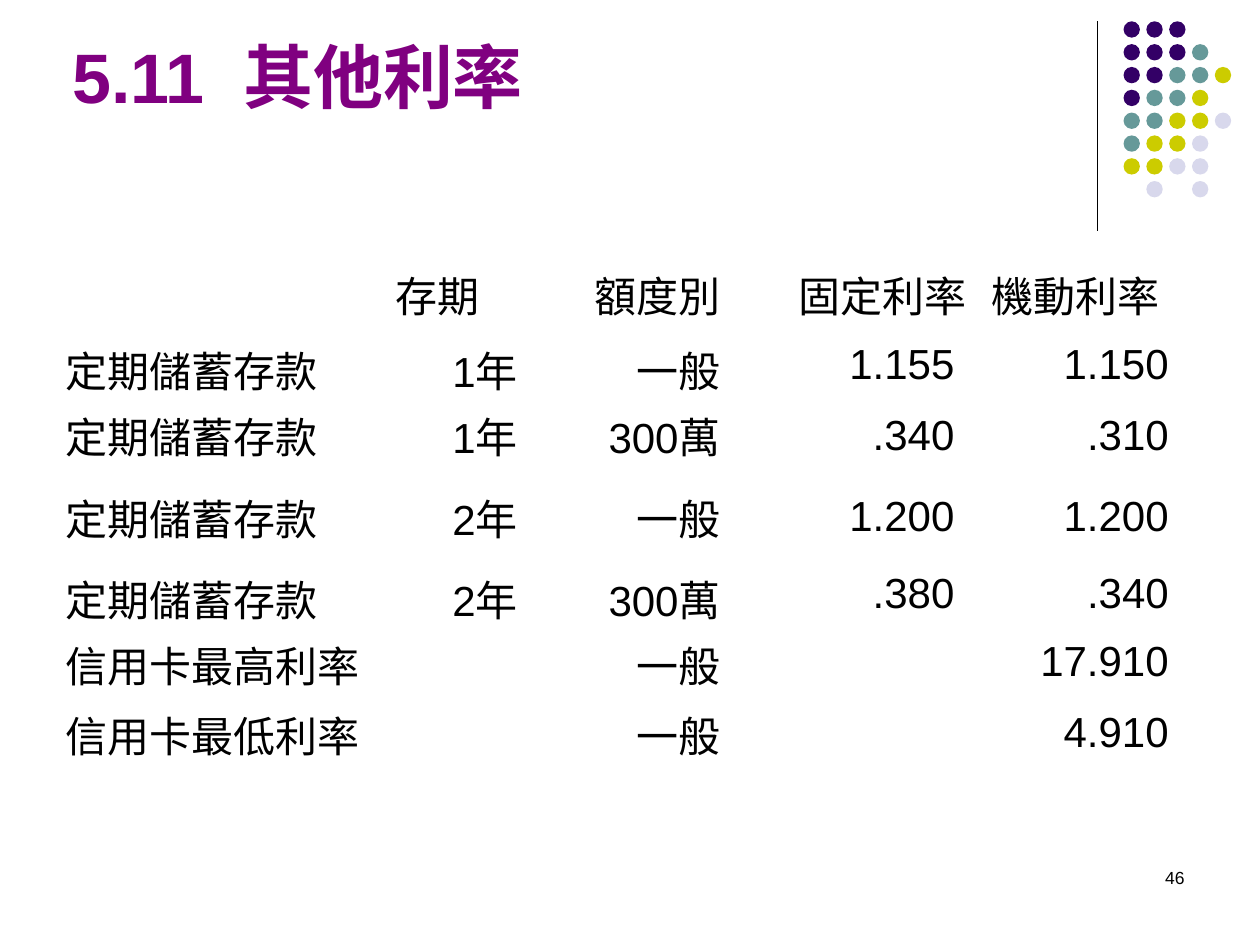
import pptx
import pptx.util
import pptx.dml.color
import pptx.enum.shapes
import pptx.enum.text
import pptx.oxml.ns
from lxml import etree

Cm, Pt = pptx.util.Cm, pptx.util.Pt
ALIGN = {"l": pptx.enum.text.PP_ALIGN.LEFT, "r": pptx.enum.text.PP_ALIGN.RIGHT}
ANCHOR = pptx.enum.text.MSO_ANCHOR


def color(value):
    return pptx.dml.color.RGBColor.from_string(value)


class Deck:
    font = "Arial"
    ink = "000000"
    accent = "800080"
    dots = {"P": "330066", "T": "669999", "Y": "CCCC00", "L": "D8D8EC"}

    def __init__(self):
        self.prs = pptx.Presentation()
        self.prs.slide_width, self.prs.slide_height = Cm(25.4), Cm(19.05)

    def add_slide(self):
        self.s = self.prs.slides.add_slide(self.prs.slide_layouts[5])

    def add_text(self, tf, text, size, align="l", ink=None, bold=False):
        p = tf.paragraphs[0]
        p.alignment = ALIGN[align]
        r = p.add_run()
        r.text = text
        r.font.name, r.font.size, r.font.bold = self.font, Pt(size), bold
        r.font.color.rgb = color(ink or self.ink)

    def title(self, text, box):
        sp = self.s.shapes.title
        sp.left, sp.top, sp.width, sp.height = map(Cm, box)
        tf = sp.text_frame
        tf.auto_size = pptx.enum.text.MSO_AUTO_SIZE.NONE
        tf.vertical_anchor = ANCHOR.BOTTOM
        self.add_text(tf, text, 40, ink=self.accent, bold=True)

    def text(self, text, box, size, align):
        tf = self.s.shapes.add_textbox(*map(Cm, box)).text_frame
        tf.word_wrap = True
        self.add_text(tf, text, size, align)

    def line(self, x1, y1, x2, y2):
        kind = pptx.enum.shapes.MSO_CONNECTOR.STRAIGHT
        sp = self.s.shapes.add_connector(kind, Cm(x1), Cm(y1), Cm(x2), Cm(y2))
        sp.line.color.rgb, sp.line.width = color(self.ink), Pt(0.75)
        etree.SubElement(sp._element.spPr, pptx.oxml.ns.qn("a:effectLst"))

    def dot_grid(self, pattern, left, top, size, pitch):
        group = self.s.shapes.add_group_shape()
        for i, row in enumerate(pattern):
            for j, key in enumerate(row):
                if key not in self.dots:
                    continue
                sp = group.shapes.add_shape(
                    pptx.enum.shapes.MSO_SHAPE.OVAL,
                    Cm(left + j * pitch), Cm(top + i * pitch), Cm(size), Cm(size))
                sp.shadow.inherit = False
                sp.fill.solid()
                sp.fill.fore_color.rgb = color(self.dots[key])
                sp.line.fill.background()

    def table(self, rows, left, top, widths, heights, header_align, body_align):
        frame = self.s.shapes.add_table(
            len(heights), len(widths), Cm(left), Cm(top), Cm(sum(widths)), Cm(sum(heights)))
        table = frame.table
        table.first_row = table.horz_banding = False
        for column, width in zip(table.columns, widths):
            column.width = Cm(width)
        for row, height in zip(table.rows, heights):
            row.height = Cm(height)
        for cell in table.iter_cells():
            cell.fill.background()
            cell.vertical_anchor = ANCHOR.MIDDLE
        for i, row in enumerate(rows):
            for j, value in enumerate(row):
                if not value:
                    continue
                cell = table.cell(i, j)
                if "." in value:  # figures sit slightly inside the right edge
                    cell.margin_right = Cm(0.49)
                align = body_align[j] if i else header_align[j]
                self.add_text(cell.text_frame, value, 24, align)


RATES = [
    ["", "存期", "額度別", "", "固定利率", "機動利率"],
    ["定期儲蓄存款", "1年", "一般", "", "1.155", "1.150"],
    ["定期儲蓄存款", "1年", "300萬", "", ".340", ".310"],
    ["定期儲蓄存款", "2年", "一般", "", "1.200", "1.200"],
    ["定期儲蓄存款", "2年", "300萬", "", ".380", ".340"],
    ["信用卡最高利率", "", "一般", "", "", "17.910"],
    ["信用卡最低利率", "", "一般", "", "", "4.910"],
]
DOT_PATTERN = ["PPP", "PPPT", "PPTTY", "PTTY", "TTYYL", "TYYL", "YYLL", ".L.L"]


def main():
    deck = Deck()
    deck.add_slide()
    # Corner decoration
    deck.line(22.12, 0.43, 22.12, 4.65)
    deck.dot_grid(DOT_PATTERN, 22.65, 0.43, size=0.33, pitch=0.46)
    # Slide number and title
    deck.text("46", (18.2, 17.35, 5.93, 1.27), 10, "r")
    deck.title("5.11  其他利率", (1.2, 0.7, 20.7, 1.8))
    # Interest rates; the last row is empty
    deck.table(RATES, 1.07, 5.18,
               widths=[6.65, 2.97, 4.09, 0.66, 4.29, 4.32],
               heights=[1.52, 1.32, 1.52, 1.78, 1.32] + [1.42] * 3,
               header_align="llrlrl", body_align="lrrlrr")
    deck.prs.save("out.pptx")


if __name__ == "__main__":
    main()
